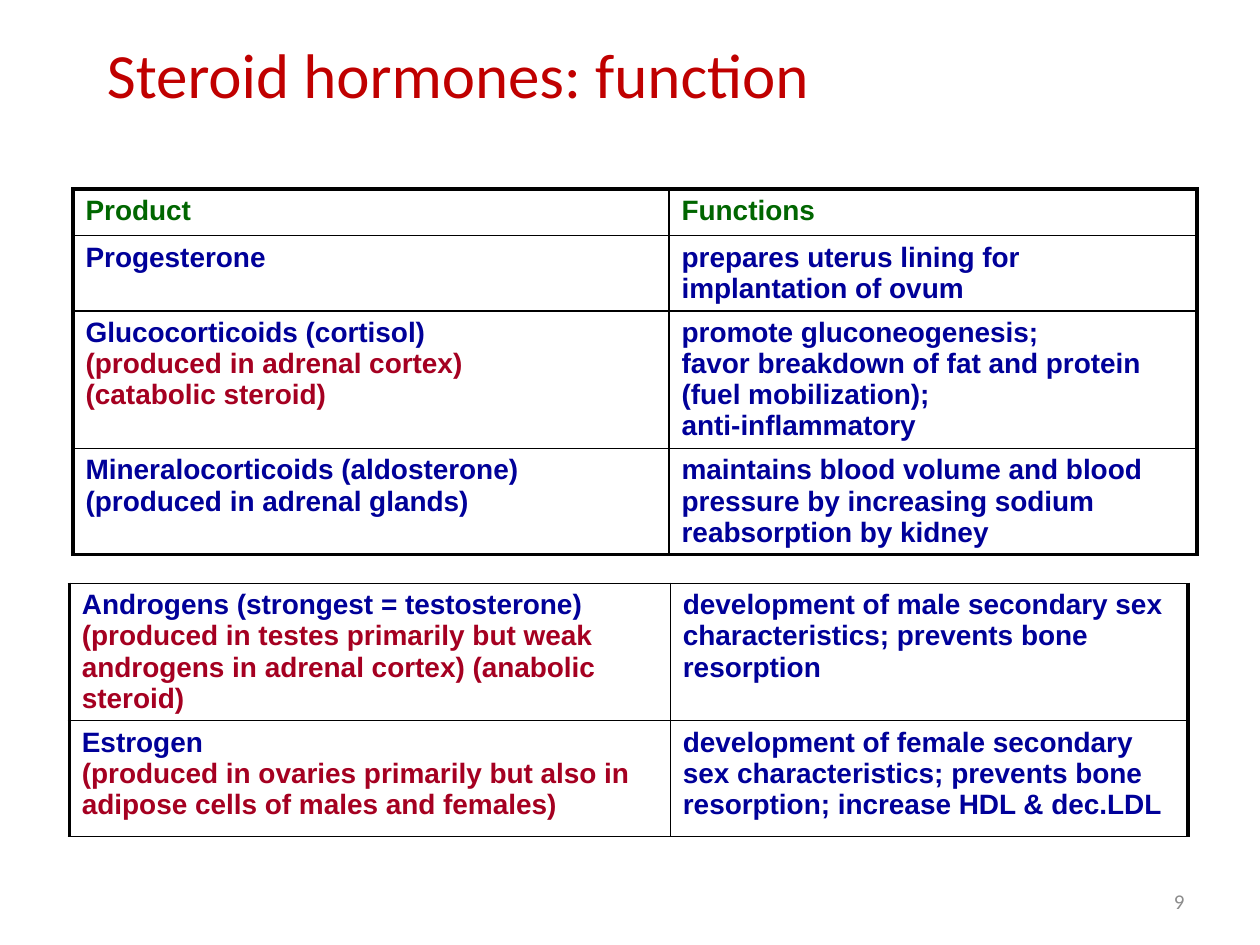
"""Build a slide with two tables on the functions of steroid hormones."""
from lxml.etree import SubElement
from pptx import Presentation
from pptx.dml.color import RGBColor
from pptx.enum.text import MSO_ANCHOR as Anchor, PP_ALIGN as Align
from pptx.oxml.ns import qn
from pptx.util import Inches, Pt

COLORS = {"title": "C00000", "header": "006600", "main": "000099",
          "source": "A50021", "number": "8C8C8C", "border": "000000"}

HORMONES = [
    ([("Product", "header")], [("Functions", "header")]),
    ([("Progesterone", "main")],
     [("prepares uterus lining for implantation of ovum", "main")]),
    ([("Glucocorticoids (cortisol)", "main"),
      ("(produced in adrenal cortex)", "source"),
      ("(catabolic steroid)", "source")],
     [("promote gluconeogenesis;", "main"),
      ("favor breakdown of fat and protein (fuel mobilization);", "main"),
      ("anti-inflammatory", "main")]),
    ([("Mineralocorticoids (aldosterone)", "main"),
      ("(produced in adrenal glands)", "main")],
     [("maintains blood volume and blood pressure by increasing sodium "
       "reabsorption by kidney", "main")]),
]
SEX_HORMONES = [
    ([("Androgens (strongest = testosterone)", "main"),
      ("(produced in testes primarily but weak androgens in adrenal cortex) "
       "(anabolic steroid)", "source")],
     [("development of male secondary sex characteristics; prevents bone "
       "resorption", "main")]),
    ([("Estrogen", "main"),
      ("(produced in ovaries primarily but also in adipose cells of males "
       "and females)", "source")],
     [("development of female secondary sex characteristics; prevents bone "
       "resorption; increase HDL & dec.LDL", "main")]),
]
TABLES = [
    {"rows": HORMONES, "at": (0.58, 1.5), "widths": (4.73, 4.19),
     "heights": (0.37, 0.6, 1.09, 0.83), "frame": 2.25},
    {"rows": SEX_HORMONES, "at": (0.55, 4.63), "widths": (4.77, 4.11),
     "heights": (1.09, 0.92), "frame": 1},
]
LABELS = [
    {"text": "Steroid hormones: function", "box": (0.75, 0.23, 8.49, 1.24),
     "color": "title", "size": 36, "align": Align.LEFT, "anchor": Anchor.TOP},
    {"text": "9", "box": (7.17, 6.95, 2.33, 0.4),
     "color": "number", "size": 12, "align": Align.RIGHT, "anchor": Anchor.MIDDLE},
]


def write(paragraph, text, color, **font_format):
    run = paragraph.add_run()
    run.text = text
    run.font.color.rgb = RGBColor.from_string(COLORS[color])
    for name, value in font_format.items():
        setattr(run.font, name, value)


def add_borders(cell, widths):
    properties = cell._tc.get_or_add_tcPr()
    for position, (side, width) in enumerate(widths.items()):
        line = properties.makeelement(qn(f"a:ln{side}"), {"w": str(Pt(width))})
        fill = SubElement(line, qn("a:solidFill"))
        SubElement(fill, qn("a:srgbClr"), val=COLORS["border"])
        properties.insert(position, line)


def add_hormone_table(slide, rows, at, widths, heights, frame):
    box = map(Inches, (*at, sum(widths), sum(heights)))
    table = slide.shapes.add_table(len(rows), len(widths), *box).table
    table.first_row = table.horz_banding = False
    for column, width in zip(table.columns, widths):
        column.width = Inches(width)
    for row, height in zip(table.rows, heights):
        row.height = Inches(height)
    for r, entries in enumerate(rows):
        for c, paragraphs in enumerate(entries):
            cell = table.cell(r, c)
            cell.fill.background()
            add_borders(cell, {"L": 2.25 if c == 0 else 1,
                               "R": 2.25 if c == len(widths) - 1 else 1,
                               "T": frame if r == 0 else 1,
                               "B": frame if r == len(rows) - 1 else 1})
            for i, (text, color) in enumerate(paragraphs):
                frame_text = cell.text_frame
                paragraph = frame_text.add_paragraph() if i else frame_text.paragraphs[0]
                write(paragraph, text, color, name="Arial", size=Pt(16), bold=True)


def add_label(slide, text, box, color, size, align, anchor):
    frame = slide.shapes.add_textbox(*map(Inches, box)).text_frame
    frame.word_wrap = True
    frame.vertical_anchor = anchor
    frame.paragraphs[0].alignment = align
    write(frame.paragraphs[0], text, color, name="Calibri", size=Pt(size))


def main():
    deck = Presentation()
    deck.slide_width, deck.slide_height = Inches(10), Inches(7.5)
    slide = deck.slides.add_slide(deck.slide_layouts[6])
    for table in TABLES:
        add_hormone_table(slide, **table)
    for label in LABELS:
        add_label(slide, **label)
    deck.save("out.pptx")


if __name__ == "__main__":
    main()
